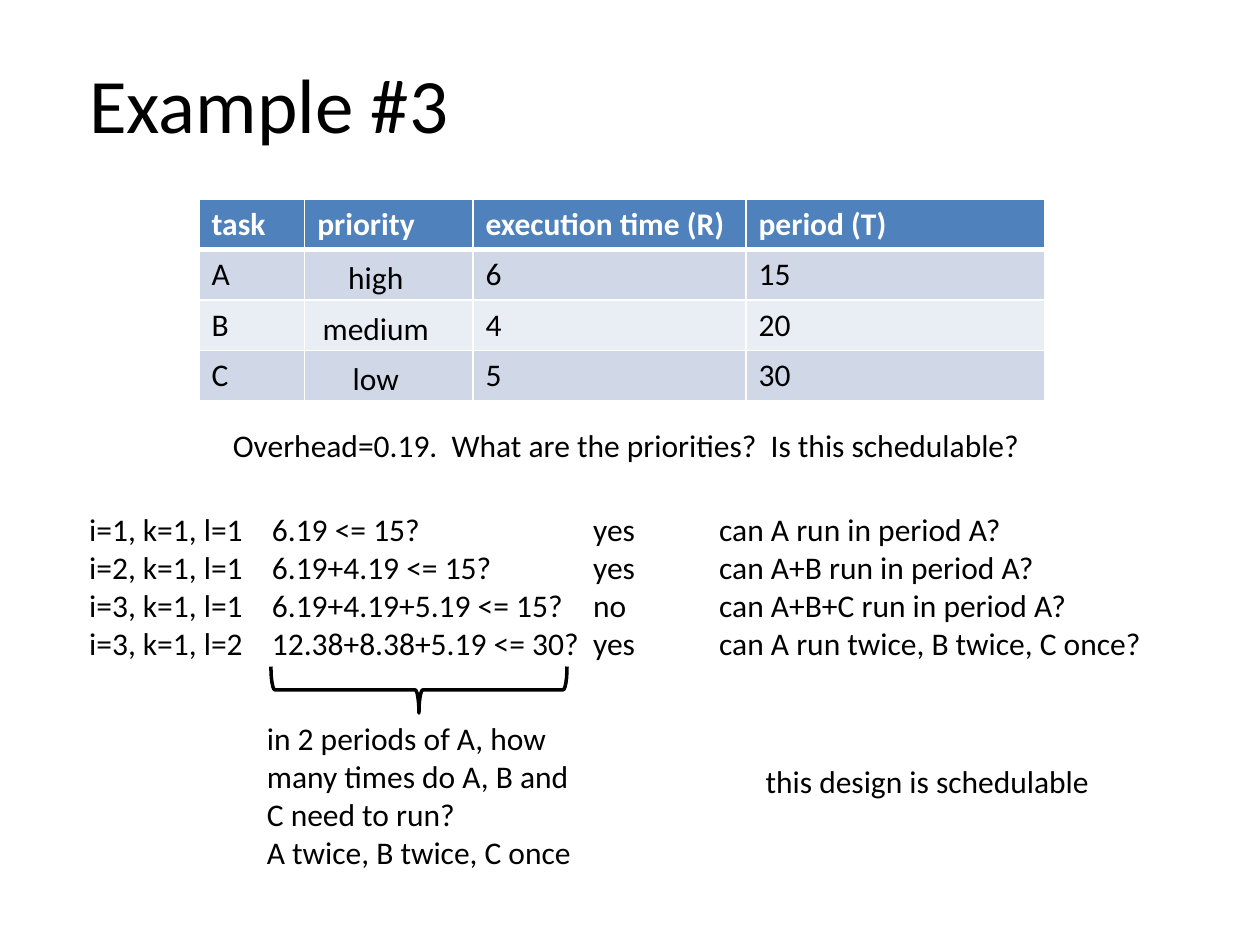
import pptx
import pptx.dml.color
import pptx.enum.shapes
import pptx.enum.text
import pptx.oxml.ns
import pptx.util
from lxml import etree

COLS, ROWS = 100, 75
WIDE, HIGH = pptx.util.Inches(10), pptx.util.Inches(7.5)
FONT = "Calibri"
BLACK, WHITE, BLUE = "000000", "FFFFFF", "4F81BD"
BANDS = ["D0D8E8", "E9EDF4"]
ALIGN = pptx.enum.text.PP_ALIGN

HEADS = ["task", "priority", "execution time (R)", "period (T)"]
TASKS = [["A", "", "6", "15"], ["B", "", "4", "20"], ["C", "", "5", "30"]]
LEVELS = ["high", "medium", "low"]
CHECKS = [
    ["i=1, k=1, l=1", "6.19 <= 15?", "yes", "can A run in period A?"],
    ["i=2, k=1, l=1", "6.19+4.19 <= 15?", "yes", "can A+B run in period A?"],
    ["i=3, k=1, l=1", "6.19+4.19+5.19 <= 15?", "no",
     "can A+B+C run in period A?"],
    ["i=3, k=1, l=2", "12.38+8.38+5.19 <= 30?", "yes",
     "can A run twice, B twice, C once?"],
]


def color(code):
    return pptx.dml.color.RGBColor.from_string(code)


def place(box):
    """Turn grid columns and rows into slide lengths."""
    x, y, w, h = box
    return (round(x * WIDE / COLS), round(y * HIGH / ROWS),
            round(w * WIDE / COLS), round(h * HIGH / ROWS))


def child(parent, tag, **attrs):
    return etree.SubElement(parent, pptx.oxml.ns.qn(tag), attrs)


def write(para, text, size=18, code=BLACK, bold=False):
    run = para.add_run()
    run.text = text
    font = run.font
    font.name, font.size, font.bold = FONT, pptx.util.Pt(size), bold
    font.color.rgb = color(code)


def add_text(slide, box, lines, size=18, align=ALIGN.LEFT, wrap=False):
    frame = slide.shapes.add_textbox(*place(box)).text_frame
    frame.word_wrap = wrap
    frame.auto_size = pptx.enum.text.MSO_AUTO_SIZE.SHAPE_TO_FIT_TEXT
    for i, line in enumerate(lines):
        para = frame.paragraphs[0] if i == 0 else frame.add_paragraph()
        para.alignment = align
        write(para, line, size)
    return frame


def edge(cell, low):
    """Draw white borders, with the bottom one of the given width."""
    props = cell._tc.get_or_add_tcPr()
    for side, width in zip("LRTB", (1, 1, 1, low)):
        line = child(props, "a:ln" + side, w=str(pptx.util.Pt(width)))
        child(child(line, "a:solidFill"), "a:srgbClr", val=WHITE)


def add_tasks(slide, box):
    x, y, w, h = box
    data = [HEADS] + TASKS
    table = slide.shapes.add_table(
        len(data), len(HEADS), *place(box)).table
    for col, share in zip(table.columns, (0.125, 0.199, 0.323, 0.353)):
        col.width = round(place(box)[2] * share)
    for r, row in enumerate(data):
        head = r == 0
        for c, text in enumerate(row):
            cell = table.cell(r, c)
            edge(cell, 3 if head else 1)
            cell.fill.solid()
            cell.fill.fore_color.rgb = color(
                BLUE if head else BANDS[(r - 1) % 2])
            if text:
                write(cell.text_frame.paragraphs[0], text,
                      code=WHITE if head else BLACK, bold=head)
    step = h / len(data)
    for i, level in enumerate(LEVELS, 1):
        add_text(slide, (x + 0.13 * w, y + i * step + 0.2, 0.158 * w, step),
                 [level], align=ALIGN.CENTER)


def add_checks(slide, box):
    frame = add_text(slide, box, ["\t".join(row) for row in CHECKS])
    for para in frame.paragraphs:
        tabs = child(para._p.get_or_add_pPr(), "a:tabLst")
        for stop in (14.5, 40, 50):
            child(tabs, "a:tab", pos=str(round(stop * WIDE / COLS)), algn="l")


def add_note(slide, box):
    """Put a brace on top of the box and the answer below it."""
    x, y, w, h = box
    span, deep = 23.5, 3.7
    mid = x + 1.3 + span / 2
    brace = slide.shapes.add_shape(
        pptx.enum.shapes.MSO_SHAPE.RIGHT_BRACE,
        *place((mid - deep / 2, y + deep / 2 - span / 2, deep, span)))
    brace.rotation = 90
    brace.shadow.inherit = False
    brace.fill.background()
    brace.line.color.rgb = color(BLACK)
    brace.line.width = pptx.util.Pt(2)
    add_text(slide, (x, y + deep, w, h - deep),
             ["in 2 periods of A, how many times do A, B and C need to run?",
              "A twice, B twice, C once"], wrap=True)


def main():
    deck = pptx.Presentation()
    deck.slide_width, deck.slide_height = WIDE, HIGH
    slide = deck.slides.add_slide(deck.slide_layouts[6])
    add_text(slide, (6.1, 4, 30.8, 8.4), ["Example #3"], size=44)
    add_text(slide, (17.5, 33.3, 64.6, 4),
             ["Overhead=0.19.  What are the priorities?  "
              "Is this schedulable?"])
    add_tasks(slide, (15.8, 15.8, 67.1, 16))
    add_checks(slide, (6.1, 40, 86.4, 13.1))
    add_note(slide, (20.2, 52.9, 27, 16.8))
    add_text(slide, (59.6, 60, 28, 4), ["this design is schedulable"],
             align=ALIGN.CENTER)
    deck.save("out.pptx")


if __name__ == "__main__":
    main()
